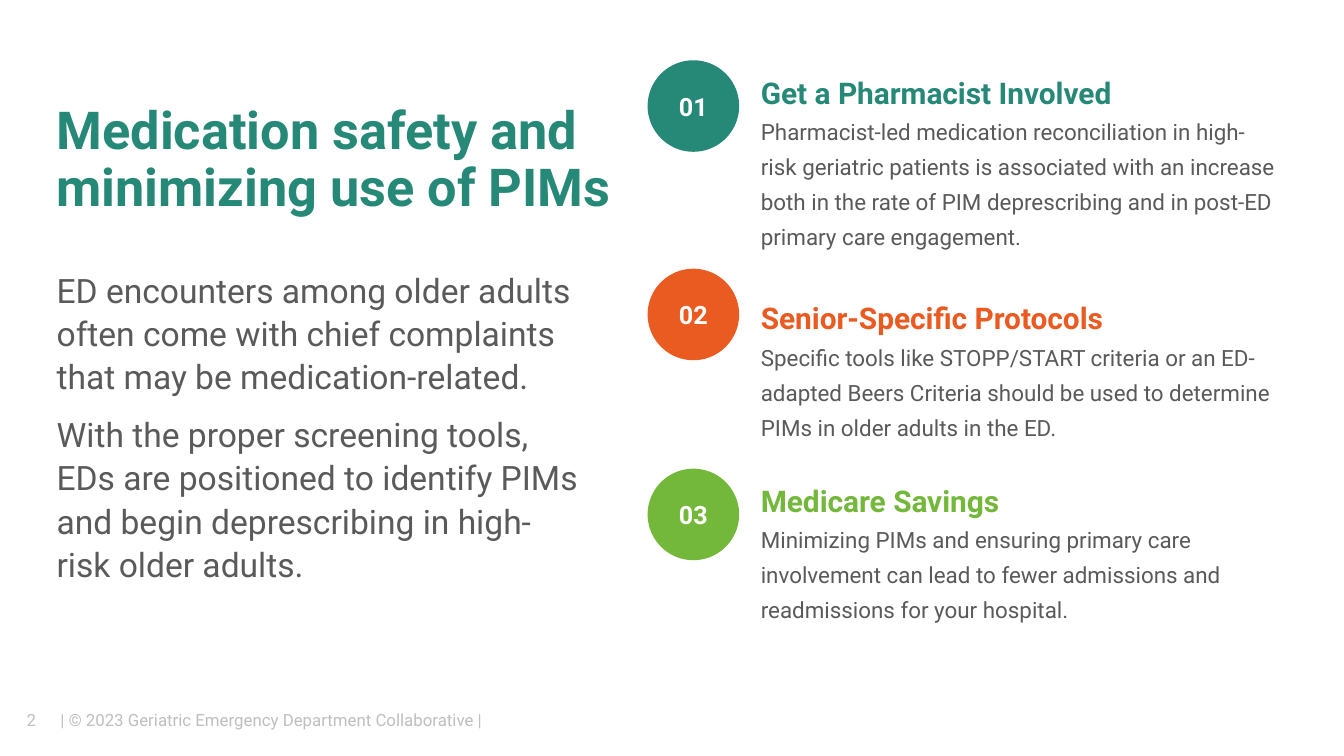
"""Build the slide on medication safety and PIMs."""
from lxml import etree
from pptx import Presentation
from pptx.dml.color import RGBColor
from pptx.enum.shapes import MSO_SHAPE
from pptx.enum.text import MSO_ANCHOR, MSO_AUTO_SIZE, PP_ALIGN
from pptx.oxml.ns import qn
from pptx.util import Cm, Pt

OVAL = MSO_SHAPE.OVAL
TOP, MID = MSO_ANCHOR.TOP, MSO_ANCHOR.MIDDLE
LEFT, CENTER = PP_ALIGN.LEFT, PP_ALIGN.CENTER
FIXED = MSO_AUTO_SIZE.NONE

FONT = "Roboto"
TEAL = RGBColor(0x26, 0x88, 0x76)
ORANGE = RGBColor(0xEA, 0x5B, 0x22)
GREEN = RGBColor(0x74, 0xB8, 0x3B)
DARK = RGBColor(0x5A, 0x5A, 0x5A)
PALE = RGBColor(0xBF, 0xBF, 0xBF)
WHITE = RGBColor(0xFF, 0xFF, 0xFF)

TITLE = "Medication safety and minimizing use of PIMs"
BODY = [
    "ED encounters among older adults often come with chief complaints "
    "that may be medication-related.",
    "With the proper screening tools, EDs are positioned to identify PIMs "
    "and begin deprescribing in high-risk older adults.",
]
STEPS = [
    (TEAL, 1.14, 1.2, 3.5, "Get a Pharmacist Involved",
     "Pharmacist-led medication reconciliation in high-risk geriatric "
     "patients is associated with an increase both in the rate of PIM "
     "deprescribing and in post-ED primary care engagement."),
    (ORANGE, 5.08, 5.47, 2.85, "Senior-Specific Protocols",
     "Specific tools like STOPP/START criteria or an ED-adapted Beers "
     "Criteria should be used to determine PIMs in older adults in the ED."),
    (GREEN, 8.86, 8.92, 2.85, "Medicare Savings",
     "Minimizing PIMs and ensuring primary care involvement can lead to "
     "fewer admissions and readmissions for your hospital."),
]
FOOTER = [
    ("2", 0.05, 1.09, CENTER),
    ("| © 2023 Geriatric Emergency Department Collaborative |",
     1.14, 10.03, LEFT),
]
DISC = 1.73


def place(shape, x, y, w, h):
    shape.left, shape.top = Cm(x), Cm(y)
    shape.width, shape.height = Cm(w), Cm(h)


def setup(shape, anchor):
    frame = shape.text_frame
    frame.auto_size = FIXED
    frame.word_wrap = True
    frame.vertical_anchor = anchor
    frame.margin_left = frame.margin_right = 0
    frame.margin_top = frame.margin_bottom = 0
    return frame


def write(para, text, size, color, bold=False, align=LEFT, lead=1.0, after=0):
    para.alignment = align
    para.line_spacing = lead
    para.space_before, para.space_after = Pt(0), Pt(after)
    run = para.add_run()
    run.text = text
    font = run.font
    font.name, font.size, font.bold = FONT, Pt(size), bold
    font.color.rgb = color


def add_box(slide, x, y, w, h, anchor):
    box = slide.shapes.add_textbox(Cm(x), Cm(y), Cm(w), Cm(h))
    return setup(box, anchor)


def add_title(slide):
    title = slide.shapes.title
    place(title, 1.07, 2.59, 10.67, 0.91)
    para = setup(title, MID).paragraphs[0]
    write(para, TITLE, 28, TEAL, True, lead=0.9)


def add_body(slide):
    body = slide.placeholders[1]
    place(body, 1.07, 5.05, 9.98, 6.25)
    frame = setup(body, TOP)
    for i, text in enumerate(BODY):
        para = frame.add_paragraph() if i else frame.paragraphs[0]
        props = para._p.get_or_add_pPr()
        props.set("marL", "0")
        props.set("indent", "0")
        etree.SubElement(props, qn("a:buNone"))
        write(para, text, 18, DARK, lead=1.07, after=8)


def add_step(slide, num, color, disc_y, text_y, high, head, text):
    frame = add_box(slide, 14.38, text_y, 9.73, high, TOP)
    write(frame.paragraphs[0], head, 16, color, True, lead=1.3)
    write(frame.add_paragraph(), text, 12, DARK, lead=1.3)
    disc = slide.shapes.add_shape(
        OVAL, Cm(12.24), Cm(disc_y), Cm(DISC), Cm(DISC))
    disc.shadow.inherit = False
    disc.fill.solid()
    disc.fill.fore_color.rgb = color
    disc.line.fill.background()
    para = setup(disc, MID).paragraphs[0]
    write(para, f"{num:02}", 13.5, WHITE, True, CENTER)


def main():
    deck = Presentation()
    deck.slide_width, deck.slide_height = Cm(25.4), Cm(14.29)
    slide = deck.slides.add_slide(deck.slide_layouts[1])
    for text, x, w, align in FOOTER:
        frame = add_box(slide, x, 13.41, w, 0.38, MID)
        write(frame.paragraphs[0], text, 9, PALE, align=align)
    add_title(slide)
    add_body(slide)
    for num, step in enumerate(STEPS, 1):
        add_step(slide, num, *step)
    deck.save("out.pptx")


if __name__ == "__main__":
    main()
